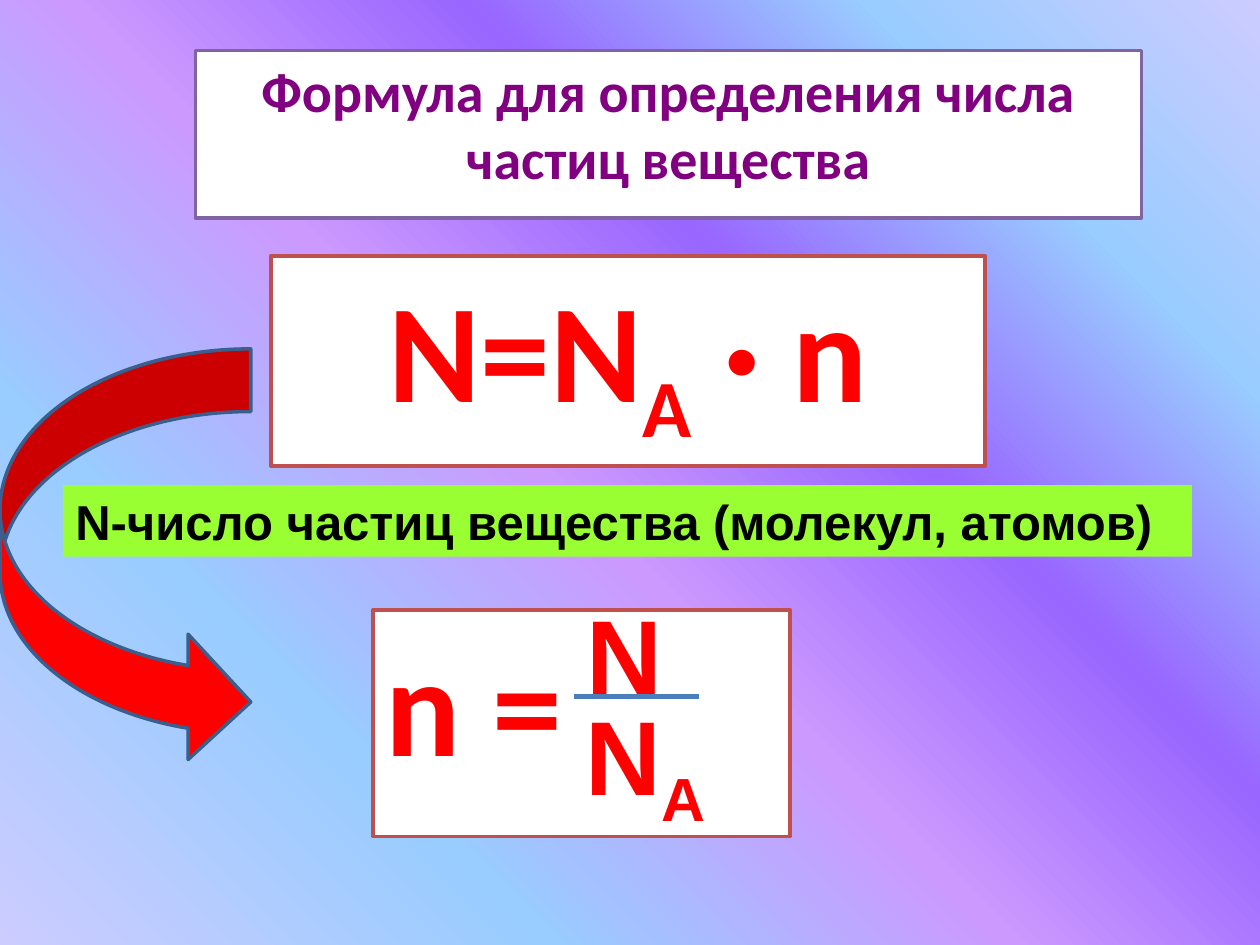
"""Build a slide with the formula for the number of particles of a substance."""
from lxml import etree
from pptx import Presentation
from pptx.dml.color import RGBColor
from pptx.enum.shapes import MSO_CONNECTOR, MSO_SHAPE
from pptx.enum.text import MSO_ANCHOR, PP_ALIGN
from pptx.oxml.ns import qn
from pptx.util import Pt

RECT, ARROW = MSO_SHAPE.RECTANGLE, MSO_SHAPE.CURVED_RIGHT_ARROW
LINE = MSO_CONNECTOR.STRAIGHT
TOP, LEFT, MID = MSO_ANCHOR.TOP, PP_ALIGN.LEFT, PP_ALIGN.CENTER
HUES = {
    "white": "FFFFFF", "violet": "8064A2", "purple": "800080",
    "brick": "C0504D", "red": "FF0000", "lime": "99FF33",
    "black": "000000", "blue": "4B7EBC", "navy": "3A5F8C",
}
STOPS = [(0, "CCCCFF"), (18, "99CCFF"), (36, "9966FF"),
         (54, "CC99FF"), (75, "99CCFF"), (100, "CCCCFF")]


def paint(shape, fill, edge):
    shape.shadow.inherit = False
    if fill:
        shape.fill.solid()
        shape.fill.fore_color.rgb = RGBColor.from_string(HUES[fill])
    if edge:
        shape.line.color.rgb = RGBColor.from_string(HUES[edge])
        shape.line.width = Pt(2)
    else:
        shape.line.fill.background()


def write(shape, parts, face, size, hue, align):
    frame = shape.text_frame
    frame.word_wrap = True
    frame.vertical_anchor = TOP
    para = frame.paragraphs[0]
    para.alignment = align
    look = {"name": face, "size": Pt(size), "bold": True}
    for text, base in parts:
        run = para.add_run()
        run.text = text
        for key, value in look.items():
            setattr(run.font, key, value)
        run.font.color.rgb = RGBColor.from_string(HUES[hue])
        if base:
            run.font._element.set("baseline", str(base * 1000))


deck = Presentation()
deck.slide_width, deck.slide_height = Pt(720), Pt(540)
slide = deck.slides.add_slide(deck.slide_layouts[6])
shapes = slide.shapes

slide.background.fill.gradient()
grad = slide.element.find(".//" + qn("a:gradFill"))
for child in list(grad):
    grad.remove(child)
stops = etree.SubElement(grad, qn("a:gsLst"))
for place, hue in STOPS:
    stop = etree.SubElement(stops, qn("a:gs"), pos=str(place * 1000))
    etree.SubElement(stop, qn("a:srgbClr"), val=hue)
way = etree.SubElement(grad, qn("a:path"), path="circle")
etree.SubElement(way, qn("a:fillToRect"), l="100000", b="100000")

BOXES = [
    ((111.6, 28.8, 540.7, 95.8), "white", "violet",
     [("Формула для определения числа частиц вещества", 0)],
     "Calibri", 32, "purple", MID),
    ((154.8, 146.2, 408.2, 120.2), "white", "brick",
     [("N=N", 0), ("А", -25), (" · n", 0)], "Calibri", 80, "red", MID),
    ((36, 277.2, 645.1, 41), "lime", None,
     [("N-число частиц вещества (молекул, атомов)", 0)],
     "Arial", 28, "black", LEFT),
    ((213.1, 348.5, 238.3, 129.6), "white", "brick",
     [("n =", 0)], "Calibri", 80, "red", LEFT),
    ((328.3, 333.4, 83.5, 79.9), None, None,
     [("N", 0)], "Arial", 60, "red", LEFT),
    ((327.6, 391, 123.8, 79.9), None, None,
     [("N", 0), ("А", -25)], "Arial", 60, "red", LEFT),
]
for spot, fill, edge, parts, face, size, hue, align in BOXES:
    place = [Pt(n) for n in spot]
    if fill:
        box = shapes.add_shape(RECT, *place)
        paint(box, fill, edge)
    else:
        box = shapes.add_textbox(*place)
    write(box, parts, face, size, hue, align)

bar = shapes.add_connector(LINE, Pt(328.3), Pt(398.2), Pt(399.6), Pt(398.2))
bar.line.color.rgb = RGBColor.from_string(HUES["blue"])
bar.line.width = Pt(3)
etree.SubElement(bar.element.spPr, qn("a:effectLst"))

arrow = shapes.add_shape(ARROW, Pt(0), Pt(199.4), Pt(143.3), Pt(237.6))
paint(arrow, "red", "navy")

deck.save("out.pptx")
